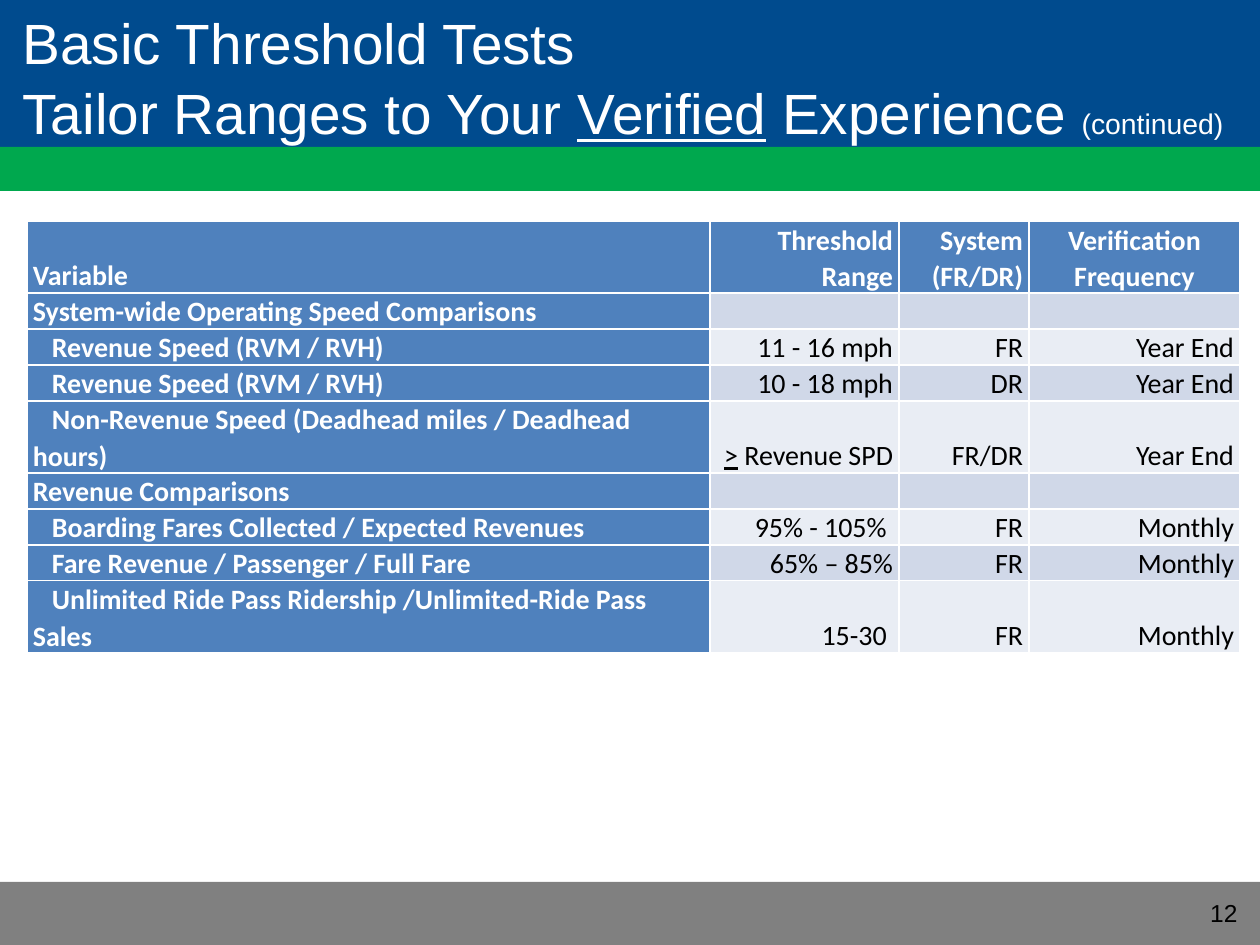
from pptx import Presentation
from pptx.dml.color import RGBColor
from pptx.enum.shapes import MSO_SHAPE
from pptx.enum.text import MSO_ANCHOR, MSO_AUTO_SIZE, PP_ALIGN
from pptx.util import Pt

PX = 914400 / 126
TITLE_ONLY = 5
RECTANGLE = MSO_SHAPE.RECTANGLE
MIDDLE, BOTTOM = MSO_ANCHOR.MIDDLE, MSO_ANCHOR.BOTTOM
LEFT, RIGHT = PP_ALIGN.LEFT, PP_ALIGN.RIGHT
CENTER, JUSTIFY = PP_ALIGN.CENTER, PP_ALIGN.JUSTIFY
NO_AUTOFIT = MSO_AUTO_SIZE.NONE

COLORS = {
    "blue": "004B8E",
    "green": "00A84E",
    "gray": "808080",
    "header": "4F81BD",
    "dark_band": "D0D8E8",
    "light_band": "E9EDF4",
    "white": "FFFFFF",
    "black": "000000",
}

COLUMN_WIDTHS = [683, 189, 130, 211]
LINE_HEIGHT = 36
HEADER = ["Variable", "Threshold Range", "System (FR/DR)", "Verification Frequency"]
HEADER_ALIGNMENTS = [JUSTIFY, RIGHT, RIGHT, CENTER]
# A row with only a name is a section heading
ROWS = [
    ["System-wide Operating Speed Comparisons"],
    ["Revenue Speed (RVM / RVH)", "11 - 16 mph", "FR", "Year End"],
    ["Revenue Speed (RVM / RVH)", "10 - 18 mph", "DR", "Year End"],
    ["Non-Revenue Speed (Deadhead miles / Deadhead hours)",
     "> Revenue SPD", "FR/DR", "Year End"],
    ["Revenue Comparisons"],
    ["Boarding Fares Collected / Expected Revenues", "95% - 105% ", "FR", "Monthly"],
    ["Fare Revenue / Passenger / Full Fare", "65% – 85%", "FR", "Monthly"],
    ["Unlimited Ride Pass Ridership /Unlimited-Ride Pass Sales",
     "15-30 ", "FR", "Monthly"],
]
TWO_LINE_ROWS = {0, 4, 8}


def px(length):
    return round(length * PX)


def color(name):
    return RGBColor.from_string(COLORS[name])


def format_run(run, size, color_name, font="Arial", bold=False, underline=False):
    run.font.name = font
    run.font.size = Pt(size)
    run.font.bold = bold
    run.font.underline = underline
    run.font.color.rgb = color(color_name)


def add_band(slide, top, height, color_name):
    band = slide.shapes.add_shape(RECTANGLE, 0, px(top), px(1260), px(height))
    band.shadow.inherit = False
    band.fill.solid()
    band.fill.fore_color.rgb = color(color_name)
    band.line.fill.background()


def add_title(slide):
    title = slide.shapes.title
    title.left, title.top, title.width, title.height = px(10), 0, px(1229), px(147)
    frame = title.text_frame
    frame.auto_size = NO_AUTOFIT
    frame.word_wrap = True
    frame.vertical_anchor = MIDDLE
    frame.margin_top, frame.margin_bottom = px(4), 0
    paragraph = frame.paragraphs[0]
    paragraph.text = "Basic Threshold Tests\vTailor Ranges to Your "
    paragraph.alignment = LEFT
    paragraph.line_spacing = 1.04
    for text in ("Verified", " Experience ", "(continued)"):
        paragraph.add_run().text = text
    for run in paragraph.runs:
        size = 16.2 if run.text == "(continued)" else 32.4
        format_run(run, size, "white", underline=run.text == "Verified")


def add_page_number(slide, number):
    box = slide.shapes.add_textbox(px(1187), px(892), px(63), px(43))
    frame = box.text_frame
    frame.word_wrap = True
    frame.text = number
    paragraph = frame.paragraphs[0]
    paragraph.alignment = RIGHT
    format_run(paragraph.runs[0], 14, "black")


def fill_cell(cell, text, alignment, fill, text_color, bold=False, indent=0):
    cell.fill.solid()
    cell.fill.fore_color.rgb = color(fill)
    cell.vertical_anchor = BOTTOM
    cell.margin_left = cell.margin_right = px(6)
    cell.margin_top = cell.margin_bottom = 0
    paragraph = cell.text_frame.paragraphs[0]
    paragraph.alignment = alignment
    paragraph.line_spacing = 1.07
    if not text:
        # Keeps an empty cell as low as its row
        paragraph._p.get_or_add_endParaRPr().set("sz", "1600")
        return
    if indent:
        paragraph._p.get_or_add_pPr().set("indent", str(px(indent)))
    # The comparison sign is underlined to read "at least"
    pieces = [">", text[1:]] if text.startswith(">") else [text]
    for piece in pieces:
        run = paragraph.add_run()
        run.text = piece
        format_run(run, 16, text_color, "Calibri", bold, piece == ">")


def add_threshold_table(slide):
    row_count = len(ROWS) + 1
    heights = [LINE_HEIGHT * (2 if row in TWO_LINE_ROWS else 1)
               for row in range(row_count)]
    table = slide.shapes.add_table(
        row_count, len(HEADER), px(27), px(221),
        px(sum(COLUMN_WIDTHS)), px(sum(heights))).table
    for column, width in zip(table.columns, COLUMN_WIDTHS):
        column.width = px(width)
    for row, height in zip(table.rows, heights):
        row.height = px(height)

    for column, (text, alignment) in enumerate(zip(HEADER, HEADER_ALIGNMENTS)):
        fill_cell(table.cell(0, column), text, alignment, "header", "white", bold=True)

    for row, (name, *values) in enumerate(ROWS, start=1):
        fill_cell(table.cell(row, 0), name, LEFT, "header", "white",
                  bold=True, indent=19 if values else 0)
        band = "dark_band" if row % 2 else "light_band"
        for column, value in enumerate(values or [""] * 3, start=1):
            fill_cell(table.cell(row, column), value, RIGHT, band, "black")


def main():
    presentation = Presentation()
    presentation.slide_width, presentation.slide_height = px(1260), px(945)
    slide = presentation.slides.add_slide(presentation.slide_layouts[TITLE_ONLY])

    # Header and footer bands, behind the title
    add_band(slide, 0, 158, "blue")
    add_band(slide, 147, 44, "green")
    add_band(slide, 882, 63, "gray")
    title_element = slide.shapes.title._element
    title_element.getparent().append(title_element)

    # Content
    add_page_number(slide, "12")
    add_title(slide)
    add_threshold_table(slide)
    presentation.save("out.pptx")


if __name__ == "__main__":
    main()
